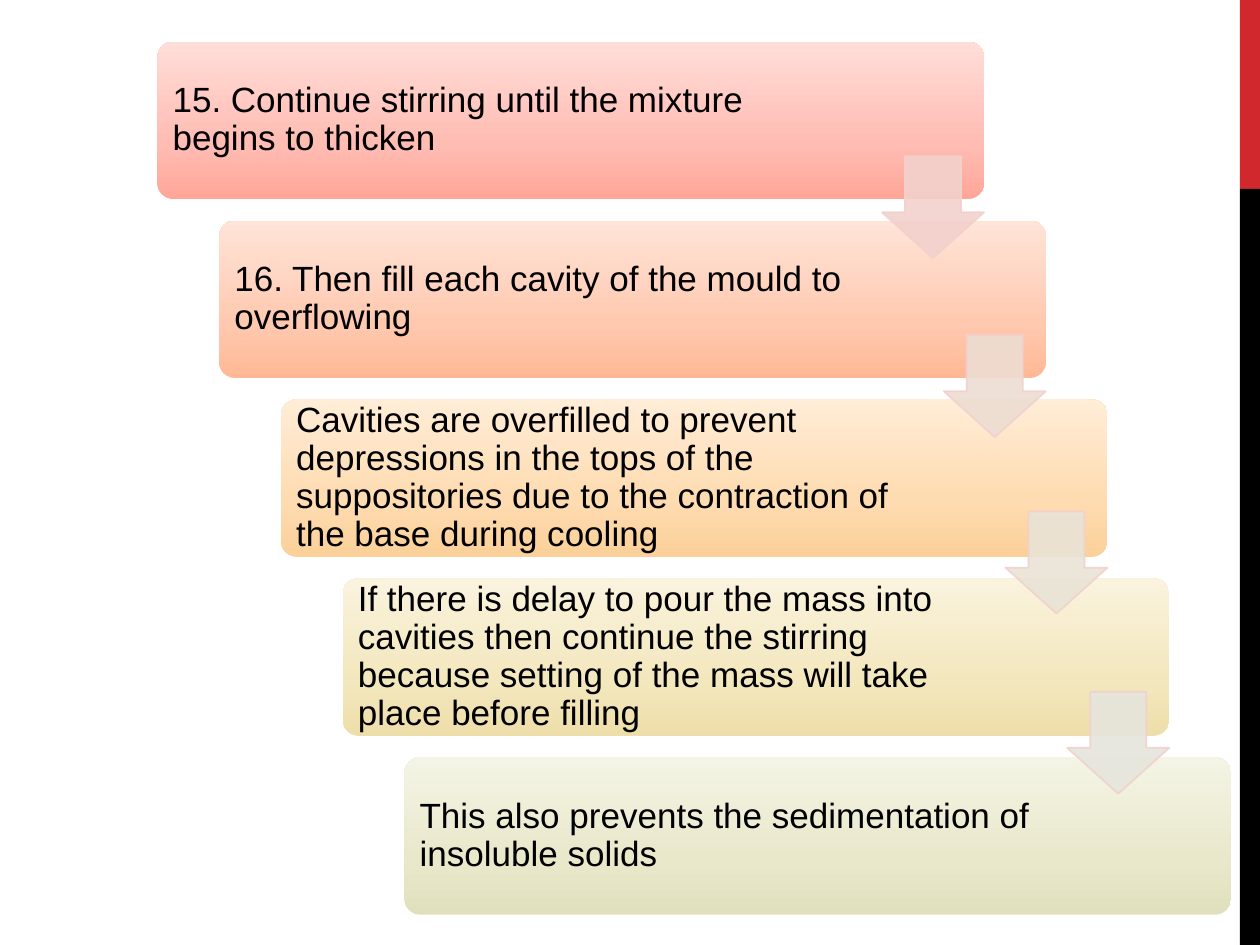
from copy import deepcopy

from lxml.etree import SubElement
from pptx import Presentation
from pptx.dml.color import RGBColor
from pptx.enum.shapes import MSO_SHAPE
from pptx.enum.text import MSO_ANCHOR, PP_ALIGN
from pptx.oxml.ns import qn
from pptx.util import Pt

EMU_PER_PX = 9144  # 100 px to the inch


def px(length):
    return length * EMU_PER_PX


def color(hex_string):
    return RGBColor.from_string(hex_string)


def write(frame, text, *, font="Arial", size=20, ink="000000", line_spacing=0.9, after=7):
    paragraph = frame.paragraphs[0]
    paragraph.alignment = PP_ALIGN.LEFT
    paragraph.line_spacing = line_spacing
    paragraph.space_after = Pt(after)
    run = paragraph.add_run()
    run.text = text
    run.font.name, run.font.size = font, Pt(size)
    run.font.color.rgb = color(ink)


def set_opacity(fill_parent, percent):
    rgb = fill_parent.find(qn("a:solidFill")).find(qn("a:srgbClr"))
    SubElement(rgb, qn("a:alpha")).set("val", str(percent * 1000))


class StepSlide:
    arrow_line = "F2D1CD"
    arrow_opacity = 90
    inset = 8
    stop_positions = (0, 0.35, 1)

    def __init__(self, slide):
        self.slide = slide

    def shape(self, preset, left, top, width, height, adjustments=()):
        shape = self.slide.shapes.add_shape(preset, px(left), px(top), px(width), px(height))
        shape.shadow.inherit = False
        shape.line.fill.background()
        for index, value in enumerate(adjustments):
            shape.adjustments[index] = value
        return shape

    def bar(self, left, top, width, height, fill):
        bar = self.shape(MSO_SHAPE.RECTANGLE, left, top, width, height)
        bar.fill.solid()
        bar.fill.fore_color.rgb = color(fill)

    def card(self, left, top, width, height, shades):
        card = self.shape(MSO_SHAPE.ROUNDED_RECTANGLE, left, top, width, height, [0.1])
        card.fill.gradient()
        card.fill.gradient_angle = 90
        # A new gradient has two stops; the third is added here
        stop_list = next(card.element.spPr.iter(qn("a:gsLst")))
        stop_list.append(deepcopy(stop_list[-1]))
        for stop, position, shade in zip(card.fill.gradient_stops, self.stop_positions, shades):
            stop.position = position
            stop.color.rgb = color(shade)

    def label(self, left, top, width, height, text):
        frame = self.slide.shapes.add_textbox(px(left), px(top), px(width), px(height)).text_frame
        frame.word_wrap = True
        frame.vertical_anchor = MSO_ANCHOR.MIDDLE
        frame.margin_left = frame.margin_right = px(self.inset)
        frame.margin_top = frame.margin_bottom = px(self.inset)
        write(frame, text)

    def arrow(self, left, top, size, fill):
        arrow = self.shape(MSO_SHAPE.DOWN_ARROW, left, top, size, size, [0.55, 0.45])
        arrow.fill.solid()
        arrow.fill.fore_color.rgb = color(fill)
        arrow.line.color.rgb = color(self.arrow_line)
        arrow.line.width = Pt(1)
        set_opacity(arrow.element.spPr, self.arrow_opacity)
        set_opacity(arrow.element.spPr.find(qn("a:ln")), self.arrow_opacity)


# Text, label width, gradient from bottom to top
STEPS = [
    ("15. Continue stirring until the mixture begins to thicken",
     507, ("FFA698", "FFBCB3", "FFDED9")),
    ("16. Then fill each cavity of the mould to overflowing",
     519, ("FFB895", "FFC9B0", "FFE4D8")),
    ("Cavities are overfilled to prevent depressions in the tops of the "
     "suppositories due to the contraction of the base during cooling",
     519, ("FBD099", "FEDBB0", "FFEDD7")),
    ("If there is delay to pour the mass into cavities then continue the stirring "
     "because setting of the mass will take place before filling",
     519, ("EEDEAA", "F3E7BD", "FAF3DE")),
    ("This also prevents the sedimentation of insoluble solids",
     519, ("E1E0BC", "E9E8CB", "F4F4E5")),
]
# Top and fill of the arrow after each step
ARROWS = [(124, "F2D1CD"), (266, "EDDDD2"), (406, "E9E3D7"), (549, "E5E5DC")]
STEP_X, STEP_Y = 49, 142


def main():
    presentation = Presentation()
    presentation.slide_width, presentation.slide_height = px(1000), px(750)
    page = StepSlide(presentation.slides.add_slide(presentation.slide_layouts[6]))

    # Side bars
    page.bar(984, 0, 16, 150, "D1282E")
    page.bar(984, 150, 16, 600, "000000")

    # Staircase of steps
    for index, (text, label_width, shades) in enumerate(STEPS):
        left, top = 125 + index * STEP_X, 33 + index * STEP_Y
        page.card(left, top, 656, 125, shades)
        page.label(left + 4, top + 4, label_width, 117, text)

    # Arrows between the steps
    for index, (top, fill) in enumerate(ARROWS):
        page.arrow(700 + index * STEP_X, top, 81, fill)

    presentation.save("out.pptx")


if __name__ == "__main__":
    main()
